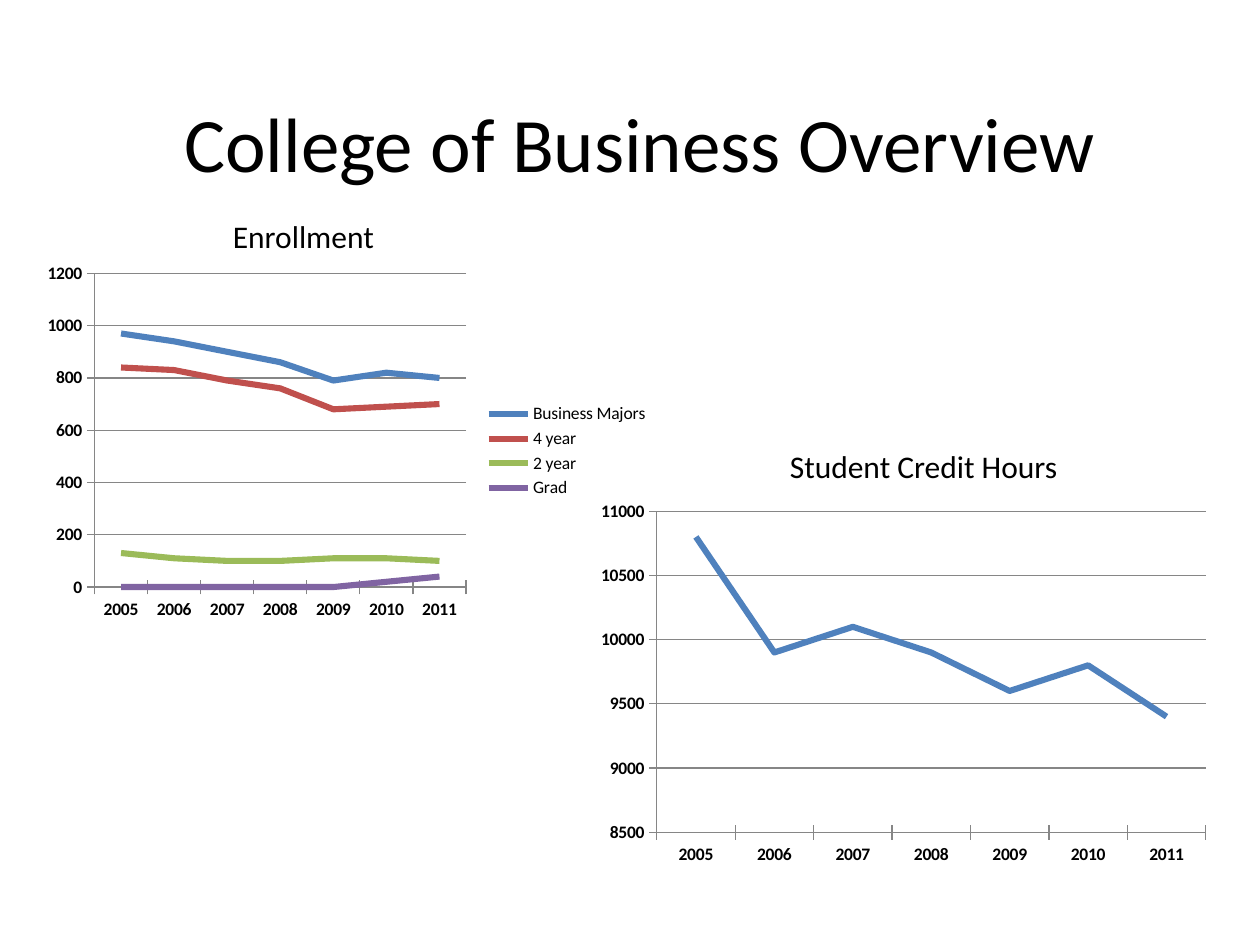
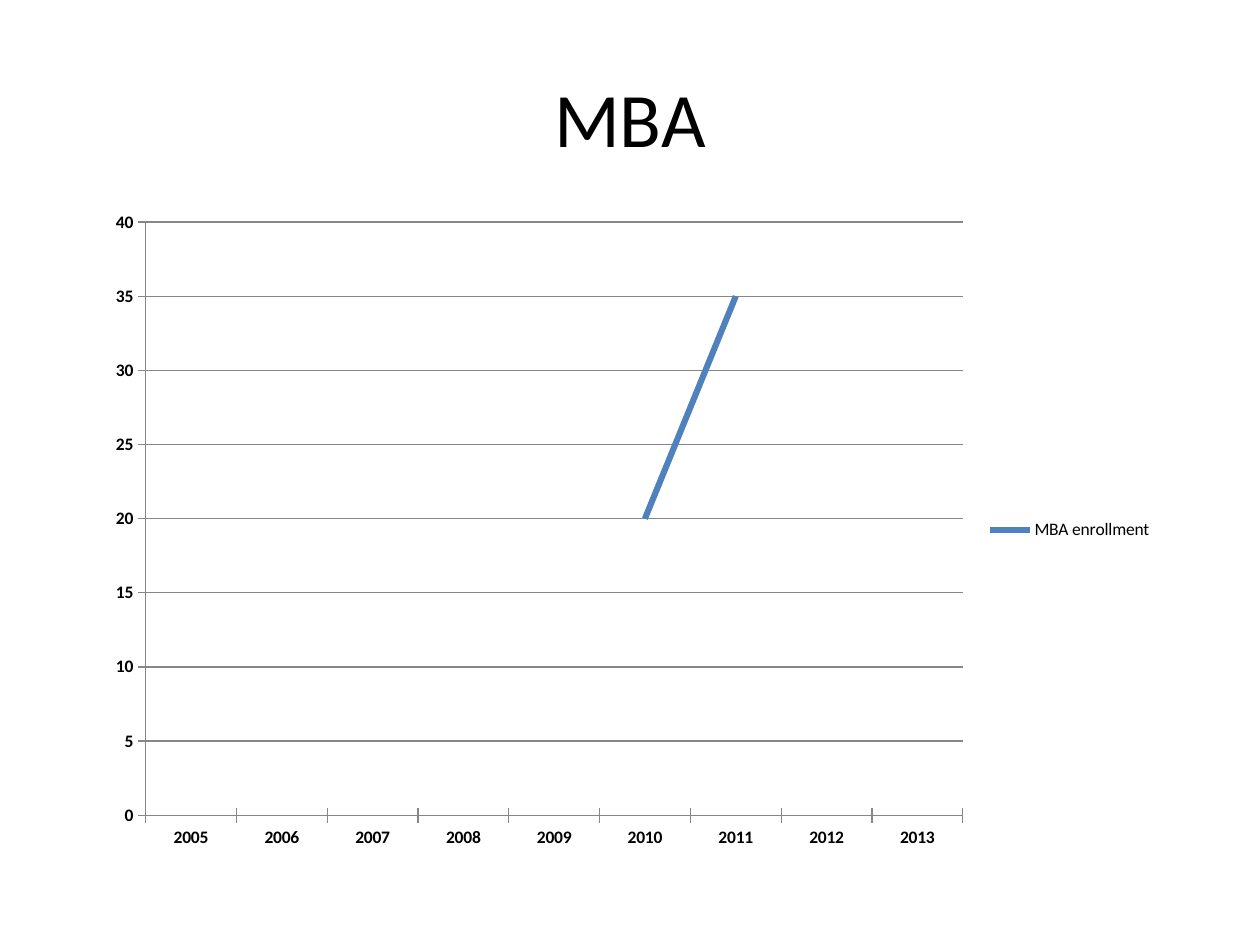
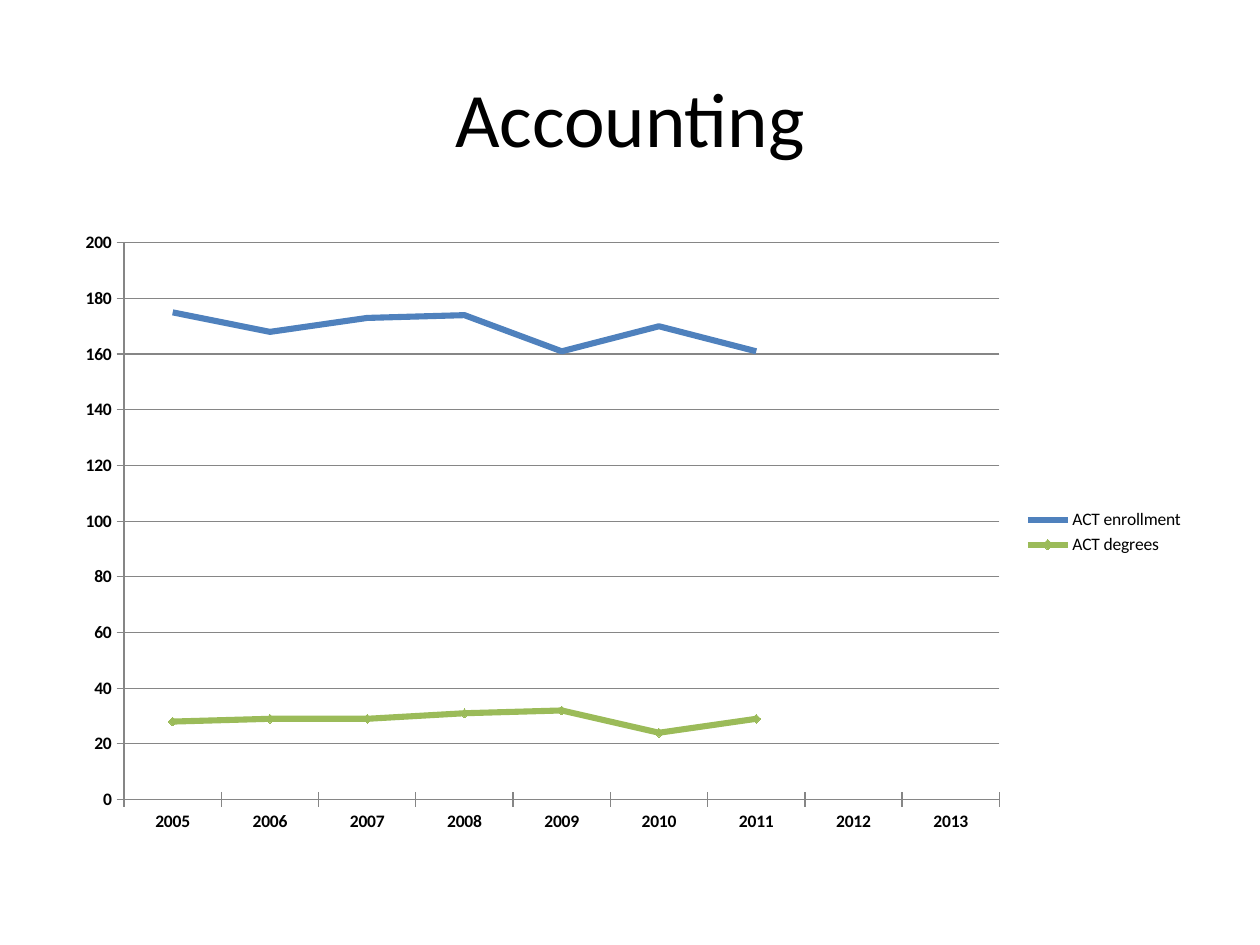
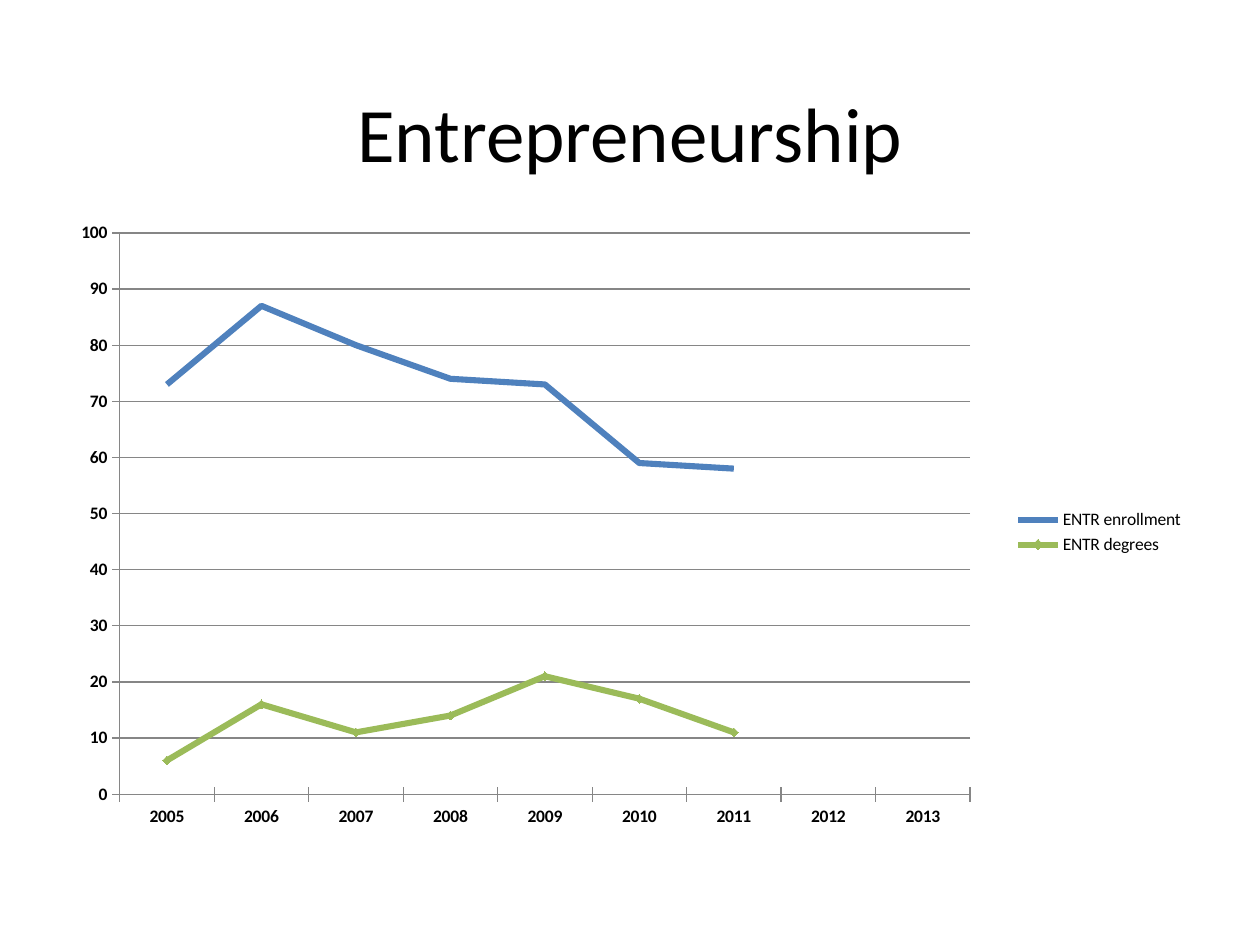
from pptx import Presentation
from pptx.chart.data import CategoryChartData
from pptx.dml.color import RGBColor
from pptx.enum.chart import (
    XL_CHART_TYPE, XL_LEGEND_POSITION, XL_MARKER_STYLE, XL_TICK_MARK)
from pptx.enum.text import MSO_ANCHOR, PP_ALIGN
from pptx.oxml import parse_xml
from pptx.oxml.ns import nsdecls
from pptx.util import Inches, Pt

LINE = XL_CHART_TYPE.LINE
LEGEND_RIGHT = XL_LEGEND_POSITION.RIGHT
NO_MARKER = XL_MARKER_STYLE.NONE
DIAMOND = XL_MARKER_STYLE.DIAMOND
TICK_CROSS = XL_TICK_MARK.CROSS
TICK_NONE = XL_TICK_MARK.NONE
MIDDLE, TOP = MSO_ANCHOR.MIDDLE, MSO_ANCHOR.TOP
CENTER, LEFT = PP_ALIGN.CENTER, PP_ALIGN.LEFT

FONT = "Calibri"
BLACK, WHITE, GREY = "000000", "FFFFFF", "868686"
BLUE, RED, GREEN, PURPLE = "4F81BD", "C0504D", "9BBB59", "8064A2"

YEARS_TO_2011 = [str(year) for year in range(2005, 2012)]
YEARS_TO_2013 = [str(year) for year in range(2005, 2014)]
PROGRAM_CHART = (0.5, 1.75, 9, 4.95)


def rgb(hex_color):
    return RGBColor.from_string(hex_color)


def set_font(font, size, bold=False):
    for name, value in {"name": FONT, "size": Pt(size), "bold": bold}.items():
        setattr(font, name, value)
    font.color.rgb = rgb(BLACK)


def add_text(slide, text, box, size, align=LEFT, anchor=TOP, wrap=False):
    frame = slide.shapes.add_textbox(*map(Inches, box)).text_frame
    frame.word_wrap = wrap
    frame.vertical_anchor = anchor
    paragraph = frame.paragraphs[0]
    paragraph.alignment = align
    run = paragraph.add_run()
    run.text = text
    set_font(run.font, size)


def add_titled_slide(deck, title, left=0.5, top=0.3):
    slide = deck.slides.add_slide(deck.slide_layouts[6])
    slide.background.fill.solid()
    slide.background.fill.fore_color.rgb = rgb(WHITE)
    add_text(slide, title, (left, top, 9, 1.25), 44, CENTER, MIDDLE, wrap=True)
    return slide


def add_subtitle(slide, text, box):
    add_text(slide, text, box, 18)


def place_plot(chart, area):
    """Fix the inner plot area, given as fractions of the chart."""
    plot_area = chart.element.xpath("c:chart/c:plotArea")[0]
    for automatic in plot_area.xpath("c:layout"):
        plot_area.remove(automatic)
    sizes = "".join(f'<c:{side} val="{value}"/>'
                    for side, value in zip("xywh", area))
    plot_area.insert(0, parse_xml(
        f'<c:layout {nsdecls("c")}><c:manualLayout>'
        '<c:layoutTarget val="inner"/><c:xMode val="edge"/><c:yMode val="edge"/>'
        f'{sizes}</c:manualLayout></c:layout>'))


def style_axis(axis):
    axis.major_tick_mark = TICK_CROSS
    axis.minor_tick_mark = TICK_NONE
    set_font(axis.tick_labels.font, 10, bold=True)
    style_line(axis.format.line, GREY, 0.75)


def style_line(line, color, width):
    line.color.rgb = rgb(color)
    line.width = Pt(width)


def style_series(series, color, marked):
    series.smooth = False
    style_line(series.format.line, color, 3.5)
    series.marker.style = DIAMOND if marked else NO_MARKER
    if marked:
        series.marker.size = 5
        series.marker.format.fill.solid()
        series.marker.format.fill.fore_color.rgb = rgb(color)
        series.marker.format.line.color.rgb = rgb(color)


def add_line_chart(slide, box, years, lines, scale, legend=True, plot=None,
                   marked=()):
    """lines holds (name, color, values); scale is (minimum, maximum, step)."""
    data = CategoryChartData()
    data.categories = years
    for name, _, values in lines:
        # Years without a figure stay empty
        data.add_series(name, values + [None] * (len(years) - len(values)))
    chart = slide.shapes.add_chart(LINE, *map(Inches, box), data).chart
    set_font(chart.font, 10)
    chart.has_title = False
    chart.has_legend = legend
    if legend:
        chart.legend.position = LEGEND_RIGHT
        chart.legend.include_in_layout = False
        set_font(chart.legend.font, 10)
    style_axis(chart.category_axis)
    values_axis = chart.value_axis
    style_axis(values_axis)
    for name, value in zip(("minimum_scale", "maximum_scale", "major_unit"), scale):
        setattr(values_axis, name, value)
    values_axis.has_major_gridlines = True
    style_line(values_axis.major_gridlines.format.line, GREY, 0.75)
    chart.plots[0].vary_by_categories = False
    for series, (name, color, _) in zip(chart.plots[0].series, lines):
        style_series(series, color, name in marked)
    if plot:
        place_plot(chart, plot)


def add_program_chart(slide, code, enrollment, degrees, scale, plot=None):
    """Chart a program's enrollment against the degrees it granted."""
    degrees_name = f"{code} degrees"
    add_line_chart(slide, PROGRAM_CHART, YEARS_TO_2013, [
        (f"{code} enrollment", BLUE, enrollment),
        (degrees_name, GREEN, degrees),
    ], scale, plot=plot, marked=(degrees_name,))


def main():
    deck = Presentation()
    deck.slide_width, deck.slide_height = Inches(10), Inches(7.5)

    overview = add_titled_slide(deck, "College of Business Overview", 0.58, 0.5)
    add_subtitle(overview, "Enrollment", (1.75, 1.67, 1.33, 0.4))
    add_subtitle(overview, "Student Credit Hours", (6.17, 3.5, 2.58, 0.4))
    add_line_chart(overview, (4.67, 3.92, 5, 3), YEARS_TO_2011, [
        ("Series 1", BLUE, [10800, 9900, 10100, 9900, 9600, 9800, 9400]),
    ], (8500, 11000, 500), legend=False)
    add_line_chart(overview, (0.25, 2.08, 5, 3), YEARS_TO_2011, [
        ("Business Majors", BLUE, [970, 940, 900, 860, 790, 820, 800]),
        ("4 year", RED, [840, 830, 790, 760, 680, 690, 700]),
        ("2 year", GREEN, [130, 110, 100, 100, 110, 110, 100]),
        ("Grad", PURPLE, [0, 0, 0, 0, 0, 20, 40]),
    ], (0, 1200, 200), plot=(0.1, 0.03, 0.59, 0.83))

    mba = add_titled_slide(deck, "MBA")
    add_line_chart(mba, (0.75, 1.58, 8.5, 5.25), YEARS_TO_2013, [
        ("MBA enrollment", BLUE, [None] * 5 + [20, 35]),
    ], (0, 40, 5))

    accounting = add_titled_slide(deck, "Accounting")
    add_program_chart(accounting, "ACT", [175, 168, 173, 174, 161, 170, 161],
                      [28, 29, 29, 31, 32, 24, 29], (0, 200, 20))

    entrepreneurship = add_titled_slide(deck, "Entrepreneurship", top=0.42)
    add_program_chart(entrepreneurship, "ENTR", [73, 87, 80, 74, 73, 59, 58],
                      [6, 16, 11, 14, 21, 17, 11], (0, 100, 10),
                      plot=(0.05, 0.02, 0.75, 0.9))

    deck.save("out.pptx")


if __name__ == "__main__":
    main()
